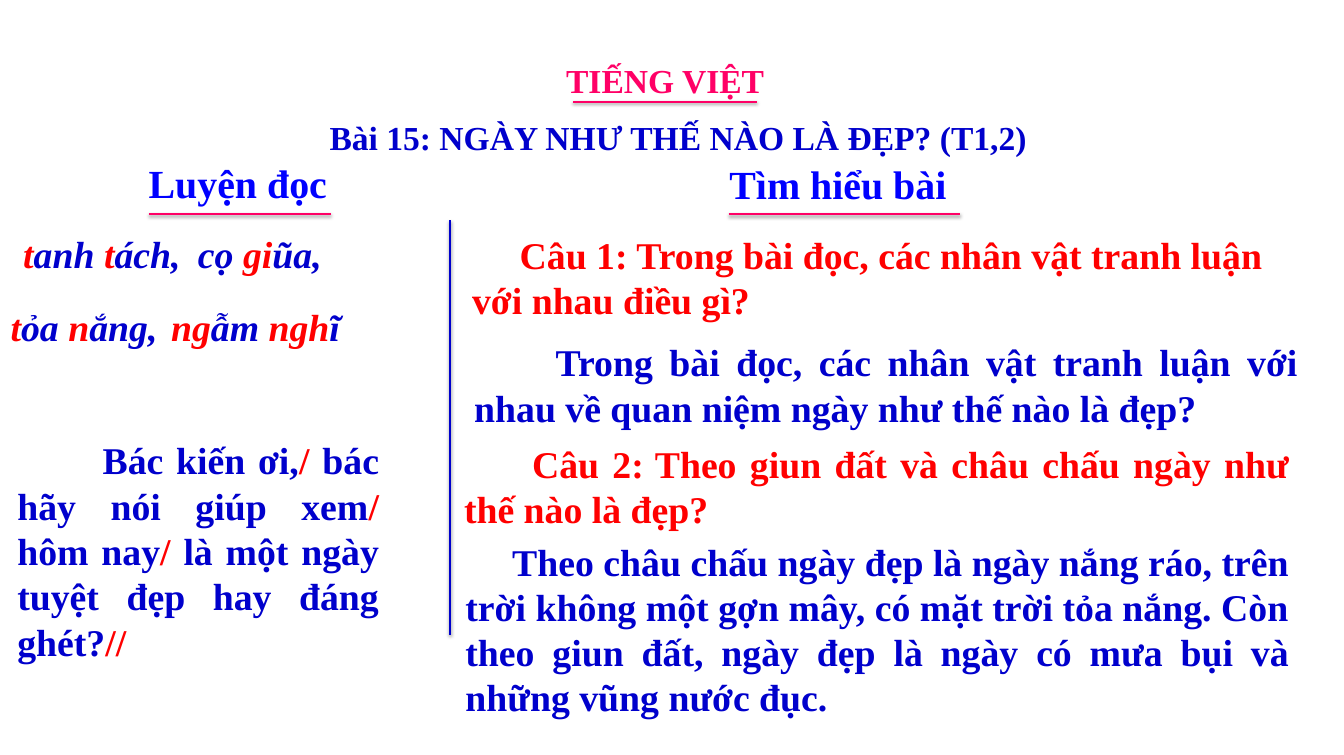
import pptx
import pptx.util
import pptx.dml.color
import pptx.enum.shapes
import pptx.enum.text
import pptx.oxml
import pptx.oxml.ns

WIDTH, HEIGHT = 17.8, 10
FONT = "Times New Roman"
COLOURS = {"pink": "FF0066", "navy": "0000CC", "blue": "0000FF",
           "red": "FF0000", "black": "000000"}
ALIGN = pptx.enum.text.PP_ALIGN
LEFT, CENTRE, JUSTIFY = ALIGN.LEFT, ALIGN.CENTER, ALIGN.JUSTIFY

# Content: places are percent of the slide (left, top, width, height)
LESSON = ("Bài 15: NGÀY NHƯ THẾ NÀO LÀ ĐẸP? (T1,2)", (22.87, 14.7, 55.22, 7))

# Text, place, size, colour, alignment, insets
HEADINGS = [
    ("TIẾNG VIỆT", (41.57, 7.5, 16.01, 6.4), 32, "pink", LEFT, (0.1, 0.05)),
    ("Luyện đọc", (10.56, 20.7, 14.27, 7.1), 38, "blue", CENTRE, (0.06, 0.03)),
    ("Tìm hiểu bài", (53.76, 20.9, 17.19, 7.1), 38, "blue", CENTRE, (0.06, 0.03)),
]

# Start x, start y, end x, end y, colour
RULES = [
    (42.64, 13.5, 56.35, 13.5, "pink"),
    (11.07, 28.4, 24.61, 28.4, "pink"),
    (54.21, 28.4, 71.46, 28.4, "pink"),
    (33.48, 29.2, 33.48, 84.1, "navy"),
]

# Left, top, width, runs
WORDS = [
    (1, 29.9, 19.1, [("t", "red"), ("anh ", "navy"), ("t", "red"), ("ách,", "navy")]),
    (14, 29.9, 15, [("cọ ", "navy"), ("gi", "red"), ("ũa,", "navy")]),
    (0.06, 39.5, 18.8, [("t", "red"), ("ỏa ", "navy"), ("n", "red"), ("ắng,", "navy")]),
    (12, 39.5, 20.9, [("ng", "red"), ("ẫm ", "navy"), ("ngh", "red"), ("ĩ", "navy")]),
]

# Place, first-line indent in inches, alignment, runs
PASSAGES = [
    ((34.4, 30, 62.85, 13.5), 0.63, LEFT,
     [("Câu 1: Trong bài đọc, các nhân vật tranh luận với nhau điều gì?", "red")]),
    ((34.55, 44.2, 62.75, 13.5), 1.08, JUSTIFY,
     [("Trong bài đọc, các nhân vật tranh luận với nhau về quan niệm "
       "ngày như thế nào là đẹp?", "navy")]),
    ((33.8, 57.7, 62.85, 19.5), 0.9, JUSTIFY,
     [("Câu 2:", "red"), (" ", "black"),
      ("Theo giun đất và châu chấu ngày như thế nào là đẹp?", "red")]),
    ((33.9, 70.6, 62.75, 25.6), 0.62, JUSTIFY,
     [("Theo châu chấu ngày đẹp là ngày nắng ráo, trên trời không một gợn mây, "
       "có mặt trời tỏa nắng. Còn theo giun đất, ngày đẹp là ngày có mưa bụi "
       "và những vũng nước đục.", "navy")]),
    ((0.56, 57.2, 28.37, 32.3), 1.13, JUSTIFY,
     [("Bác kiến ơi,", "navy"), ("/ ", "red"), ("bác hãy nói giúp xem", "navy"),
      ("/ ", "red"), ("hôm nay", "navy"), ("/ ", "red"),
      ("là một ngày tuyệt đẹp hay đáng ghét?", "navy"), ("//", "red")]),
]

SHADOW = ('<a:effectLst xmlns:a="http://schemas.openxmlformats.org/drawingml/2006/main">'
          '<a:outerShdw blurRad="39400" dist="20300" dir="5400000" rotWithShape="0">'
          '<a:srgbClr val="000000"><a:alpha val="38000"/></a:srgbClr>'
          '</a:outerShdw></a:effectLst>')


def across(share):
    return pptx.util.Inches(WIDTH * share / 100)


def down(share):
    return pptx.util.Inches(HEIGHT * share / 100)


def colour(name):
    return pptx.dml.color.RGBColor.from_string(COLOURS[name])


def fill_box(box, runs, size, align, insets=(0.13, 0.07), wrap=True,
             italic=None, indent=0):
    frame = box.text_frame
    frame.auto_size = pptx.enum.text.MSO_AUTO_SIZE.NONE
    frame.word_wrap = wrap
    frame.vertical_anchor = pptx.enum.text.MSO_ANCHOR.TOP
    frame.margin_left = frame.margin_right = pptx.util.Inches(insets[0])
    frame.margin_top = frame.margin_bottom = pptx.util.Inches(insets[1])
    para = frame.paragraphs[0]
    para.alignment = align
    if indent:
        properties = para._p.get_or_add_pPr()
        properties.set("marL", "0")
        properties.set("indent", str(pptx.util.Inches(indent)))
    for text, name in runs:
        span = para.add_run()
        span.text = text
        spacer = name == "black"
        span.font.name = "Arial" if spacer else FONT
        span.font.size = pptx.util.Pt(24 if spacer else size)
        span.font.bold = not spacer
        span.font.italic = italic
        span.font.color.rgb = colour(name)


def add_box(page, place):
    left, top, width, height = place
    return page.shapes.add_textbox(across(left), down(top), across(width), down(height))


def add_rule(page, x1, y1, x2, y2, name):
    rule = page.shapes.add_connector(pptx.enum.shapes.MSO_CONNECTOR.STRAIGHT,
                                     across(x1), down(y1), across(x2), down(y2))
    rule.line.color.rgb = colour(name)
    rule.line.width = pptx.util.Pt(2)
    rule._element.spPr.append(pptx.oxml.parse_xml(SHADOW))


def main():
    deck = pptx.Presentation()
    deck.slide_width, deck.slide_height = across(100), down(100)
    page = deck.slides.add_slide(deck.slide_layouts[5])

    # Lesson title
    text, (left, top, width, height) = LESSON
    title = page.shapes.title
    title.left, title.top = across(left), down(top)
    title.width, title.height = across(width), down(height)
    fill_box(title, [(text, "navy")], 32, CENTRE, (0.16, 0.08))

    # Headings, underlines and divider
    for text, place, size, name, align, insets in HEADINGS:
        fill_box(add_box(page, place), [(text, name)], size, align, insets, wrap=False)
    for rule in RULES:
        add_rule(page, *rule)

    # Reading words
    for left, top, width, runs in WORDS:
        fill_box(add_box(page, (left, top, width, 7.4)), runs, 36, JUSTIFY, italic=True)

    # Questions, answers and reading sentence
    for place, indent, align, runs in PASSAGES:
        fill_box(add_box(page, place), runs, 36, align, indent=indent)

    deck.save("out.pptx")


if __name__ == "__main__":
    main()
